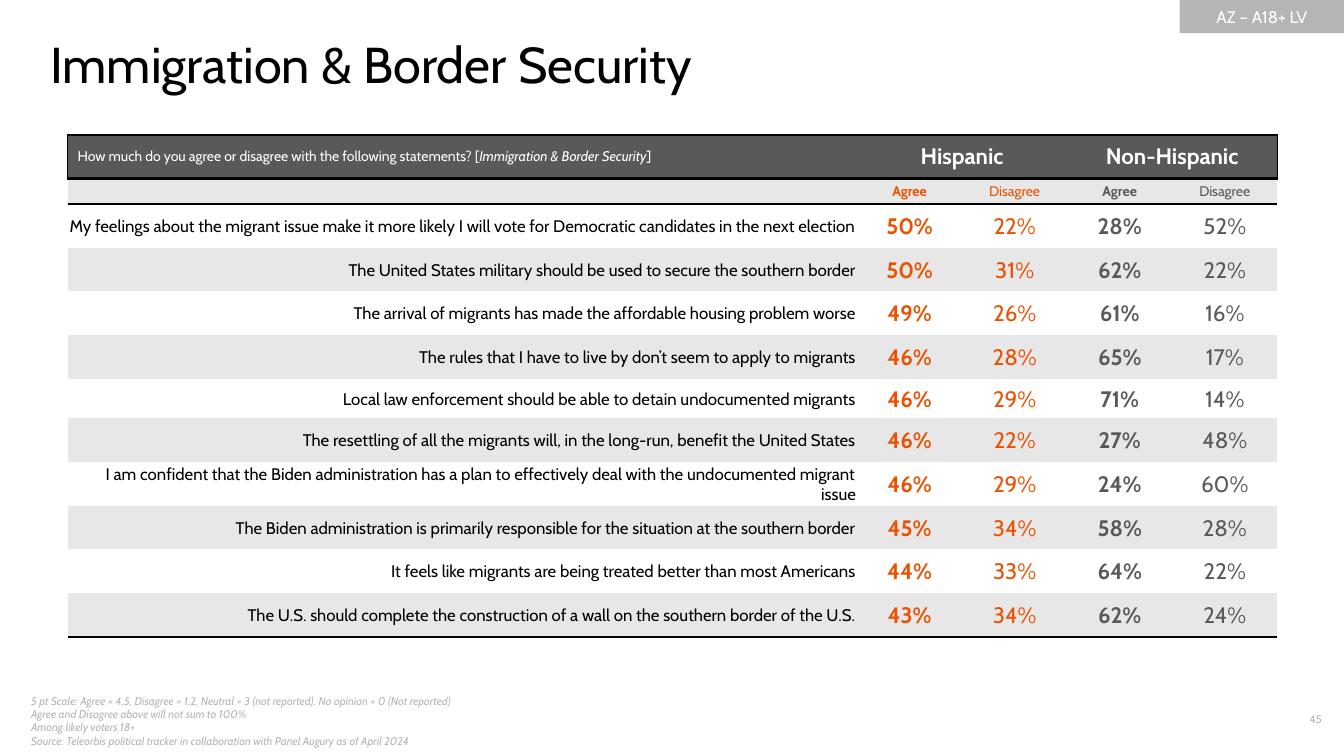
from lxml import etree
from pptx import Presentation
from pptx import util as u
from pptx.dml.color import RGBColor
from pptx.enum import shapes, text
from pptx.oxml.ns import qn

BLACK = RGBColor(0x00, 0x00, 0x00)
WHITE = RGBColor(0xFF, 0xFF, 0xFF)
CHARCOAL = RGBColor(0x59, 0x59, 0x59)
SILVER = RGBColor(0xB5, 0xB5, 0xB5)
BAND = RGBColor(0xE7, 0xE7, 0xE7)
ORANGE = RGBColor(0xEA, 0x51, 0x01)

LEFT, CENTER, RIGHT = text.PP_ALIGN.LEFT, text.PP_ALIGN.CENTER, text.PP_ALIGN.RIGHT
MIDDLE = text.MSO_ANCHOR.MIDDLE
NO_GRID_STYLE = "{2D5ABB26-0587-4C30-8999-92F81FD0307C}"

STATEMENTS = [
    ("My feelings about the migrant issue make it more likely I will vote for Democratic candidates in the next election", 50, 22, 28, 52),
    ("The United States military should be used to secure the southern border", 50, 31, 62, 22),
    ("The arrival of migrants has made the affordable housing problem worse", 49, 26, 61, 16),
    ("The rules that I have to live by don’t seem to apply to migrants", 46, 28, 65, 17),
    ("Local law enforcement should be able to detain undocumented migrants", 46, 29, 71, 14),
    ("The resettling of all the migrants will, in the long-run, benefit the United States", 46, 22, 27, 48),
    ("I am confident that the Biden administration has a plan to effectively deal with the undocumented migrant issue", 46, 29, 24, 60),
    ("The Biden administration is primarily responsible for the situation at the southern border", 45, 34, 58, 28),
    ("It feels like migrants are being treated better than most Americans", 44, 33, 64, 22),
    ("The U.S. should complete the construction of a wall on the southern border of the U.S.", 43, 34, 62, 24),
]
FOOTNOTES = [
    "5 pt Scale: Agree = 4,5, Disagree = 1,2, Neutral = 3 (not reported), No opinion = 0 (Not reported)",
    "Agree and Disagree above will not sum to 100%",
    "Among likely voters 18+\vSource: Teleorbis political tracker in collaboration with Panel Augury as of April 2024",
]


def write(para, words, size, color, align=LEFT, bold=False, italic=False):
    para.alignment = align
    for index, line in enumerate(words.split("\v")):
        if index:
            para.add_line_break()
        span = para.add_run()
        span.text = line
        span.font.name = "Cabin"
        span.font.size = u.Pt(size)
        span.font.bold = bold
        span.font.italic = italic
        span.font.color.rgb = color


def set_borders(cell, **widths):
    properties = cell._tc.get_or_add_tcPr()
    sides = [side for side in "LRTB" if side in widths]
    for index, side in enumerate(sides):
        line = etree.Element(qn(f"a:ln{side}"), w=str(u.Pt(widths[side])))
        fill = etree.SubElement(line, qn("a:solidFill"))
        etree.SubElement(fill, qn("a:srgbClr"), val=str(BLACK))
        properties.insert(index, line)


deck = Presentation()
deck.slide_width, deck.slide_height = u.Inches(13.33), u.Inches(7.5)
page = deck.slides.add_slide(deck.slide_layouts[6])

notes_box = page.shapes.add_textbox(u.Inches(0.21), u.Inches(6.95), u.Inches(5.11), u.Inches(0.4))
frame = notes_box.text_frame
frame.word_wrap = True
frame.vertical_anchor = MIDDLE
for index, note in enumerate(FOOTNOTES):
    para = frame.add_paragraph() if index else frame.paragraphs[0]
    write(para, note, 8, SILVER, italic=True)

number_box = page.shapes.add_textbox(u.Inches(12.33), u.Inches(7.02), u.Inches(0.88), u.Inches(0.27))
number_box.text_frame.word_wrap = True
write(number_box.text_frame.paragraphs[0], "45", 8, SILVER, RIGHT)

audience_tag = page.shapes.add_shape(
    shapes.MSO_SHAPE.RECTANGLE, u.Inches(11.7), 0, u.Inches(1.63), u.Inches(0.33))
audience_tag.shadow.inherit = False
audience_tag.fill.solid()
audience_tag.fill.fore_color.rgb = SILVER
audience_tag.line.fill.background()
audience_tag.text_frame.vertical_anchor = MIDDLE
write(audience_tag.text_frame.paragraphs[0], "AZ – A18+ LV", 12, WHITE, CENTER)

title_box = page.shapes.add_textbox(u.Inches(0.5), u.Inches(0.33), u.Inches(12), u.Inches(0.61))
frame = title_box.text_frame
frame.word_wrap = True
frame.margin_left = frame.margin_right = frame.margin_top = frame.margin_bottom = 0
write(frame.paragraphs[0], "Immigration & Border Security", 36, BLACK)

table_frame = page.shapes.add_table(
    len(STATEMENTS) + 2, 5, u.Inches(0.67), u.Inches(1.34), u.Inches(12), u.Inches(4.98))
table = table_frame.table
table._tbl.tblPr.find(qn("a:tableStyleId")).text = NO_GRID_STYLE
table.horz_banding = False

special_heights = {1: 0.25, 6: 0.39}
usual_height = (4.98 - sum(special_heights.values())) / (len(table.rows) - len(special_heights))
for index, row in enumerate(table.rows):
    row.height = u.Inches(special_heights.get(index, usual_height))
for index, column in enumerate(table.columns):
    column.width = u.Inches((12 - 7.83) / 4 if index else 7.83)

for index, row in enumerate(table.rows):
    for cell in row.cells:
        cell.vertical_anchor = MIDDLE
        cell.fill.solid()
        cell.fill.fore_color.rgb = CHARCOAL if index == 0 else BAND if index % 2 else WHITE
        if index == 1:
            cell.margin_top = cell.margin_bottom = u.Inches(0.03)
        elif index > 1:
            cell.margin_left = cell.margin_right = cell.margin_top = u.Inches(0.01)
            cell.margin_bottom = 0

question = table.cell(0, 0).text_frame.paragraphs[0]
write(question, "How much do you agree or disagree with the following statements? [", 10, WHITE)
write(question, "Immigration & Border Security", 10, WHITE, italic=True)
write(question, "]", 10, WHITE)
for column, group in ((1, "Hispanic"), (3, "Non-Hispanic")):
    table.cell(0, column).merge(table.cell(0, column + 1))
    write(table.cell(0, column).text_frame.paragraphs[0], group, 16, WHITE, CENTER, bold=True)

blank_para = table.cell(1, 0).text_frame.paragraphs[0]
etree.SubElement(blank_para._p, qn("a:endParaRPr"), sz="1000")

for column in range(1, 5):
    color = ORANGE if column < 3 else CHARCOAL
    is_agree = column % 2 == 1
    label = "Agree" if is_agree else "Disagree"
    write(table.cell(1, column).text_frame.paragraphs[0], label, 10, color, CENTER, is_agree)
    for row, statement in enumerate(STATEMENTS, 2):
        para = table.cell(row, column).text_frame.paragraphs[0]
        write(para, f"{statement[column]}%", 16, color, CENTER, is_agree)
for row, statement in enumerate(STATEMENTS, 2):
    write(table.cell(row, 0).text_frame.paragraphs[0], statement[0], 12, BLACK, RIGHT)

last_row = len(table.rows) - 1
for column in range(5):
    outer = {0: {"L": 1}, 3: {"R": 1}, 4: {"R": 1}}.get(column, {})
    set_borders(table.cell(0, column), T=2.25, B=2.25, **outer)
    set_borders(table.cell(1, column), T=2.25)
    set_borders(table.cell(last_row, column), B=2.25)

deck.save("out.pptx")
